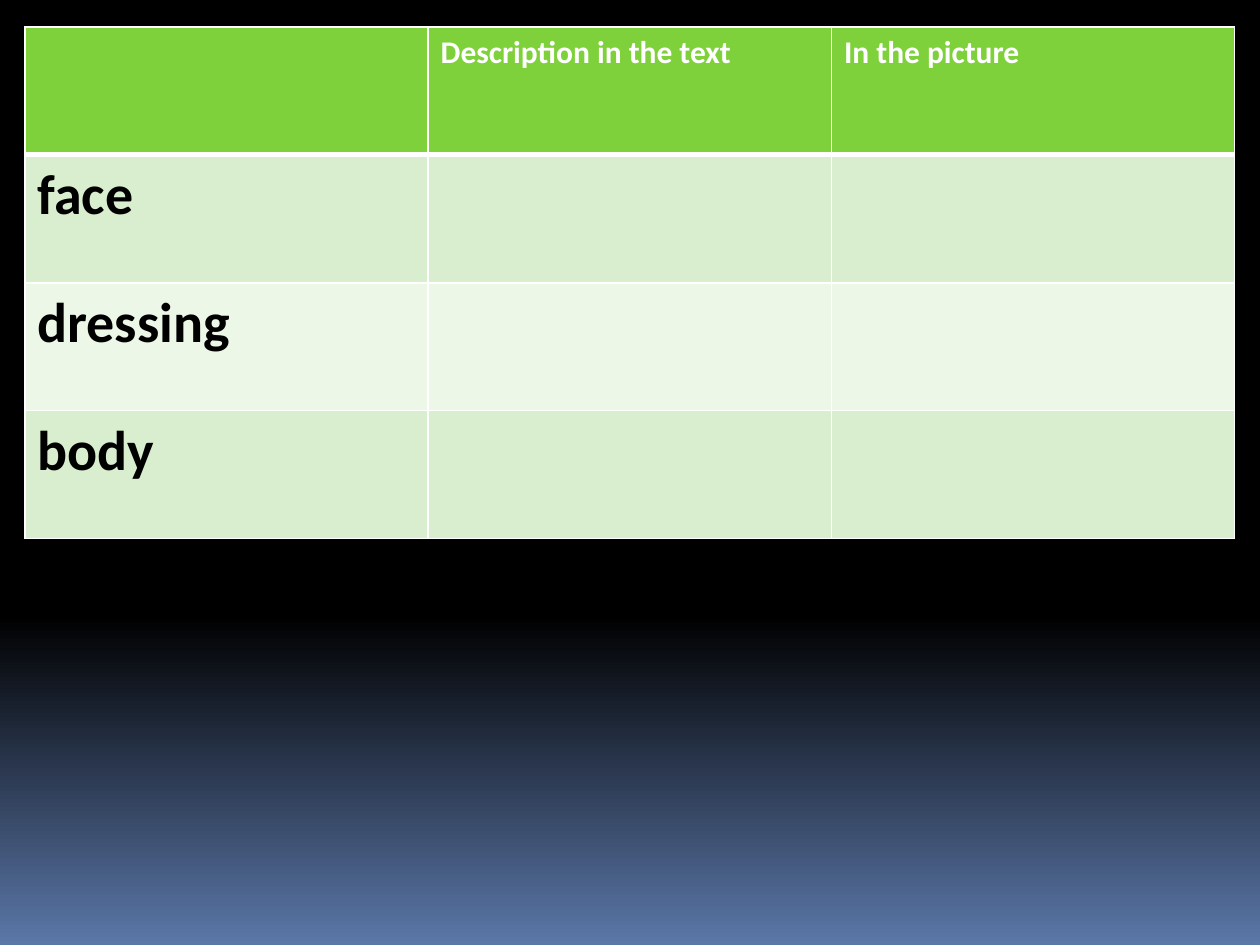
"""Build a slide with a table comparing a described person with a picture."""
from lxml import etree
from pptx import Presentation
from pptx import util as u
from pptx.dml.color import RGBColor
from pptx.oxml.ns import qn

BLACK = RGBColor(0x00, 0x00, 0x00)
WHITE = RGBColor(0xFF, 0xFF, 0xFF)
BLUE = RGBColor(0x5B, 0x77, 0xA8)
GREEN = RGBColor(0x7F, 0xD1, 0x3B)
BANDS = (RGBColor(0xD8, 0xEE, 0xCE), RGBColor(0xEC, 0xF7, 0xE8))

ROWS = (
    ("", "Description in the text", "In the picture"),
    ("face", "", ""),
    ("dressing", "", ""),
    ("body", "", ""),
)
COLUMN_WIDTH = u.Cm(8.13)
ROW_HEIGHT = u.Cm(2.58)


def set_background(slide):
    fill = slide.background.fill
    fill.gradient()
    fill.gradient_angle = 270
    for stop, position, color in zip(fill.gradient_stops, (0.65, 1), (BLACK, BLUE)):
        stop.position = position
        stop.color.rgb = color


def write_text(cell, content, *, size, color, bold=True, font="Calibri"):
    run = cell.text_frame.paragraphs[0].add_run()
    run.text = content
    run.font.name = font
    run.font.size = u.Pt(size)
    run.font.bold = bold
    run.font.color.rgb = color


def set_borders(cell, **widths):
    properties = cell._tc.get_or_add_tcPr()
    for side, width in widths.items():
        line = etree.SubElement(properties, qn(f"a:ln{side}"), w=str(u.Pt(width)))
        solid = etree.SubElement(line, qn("a:solidFill"))
        etree.SubElement(solid, qn("a:srgbClr"), val=str(WHITE))


def add_comparison_table(slide, rows, left, top):
    columns = len(rows[0])
    table = slide.shapes.add_table(
        len(rows), columns, left, top, COLUMN_WIDTH * columns, ROW_HEIGHT * len(rows)
    ).table
    for column in table.columns:
        column.width = COLUMN_WIDTH
    for index, (row, contents) in enumerate(zip(table.rows, rows)):
        row.height = ROW_HEIGHT
        header = index == 0
        for cell, content in zip(row.cells, contents):
            set_borders(cell, L=1, R=1, T=3 if index == 1 else 1, B=3 if header else 1)
            cell.fill.solid()
            cell.fill.fore_color.rgb = GREEN if header else BANDS[(index - 1) % 2]
            if content:
                write_text(cell, content, size=18 if header else 32,
                           color=WHITE if header else BLACK)


def main():
    presentation = Presentation()
    presentation.slide_width = u.Cm(25.4)
    presentation.slide_height = u.Cm(19.05)
    slide = presentation.slides.add_slide(presentation.slide_layouts[6])
    set_background(slide)
    add_comparison_table(slide, ROWS, left=u.Cm(0.5), top=u.Cm(0.54))
    presentation.save("out.pptx")


if __name__ == "__main__":
    main()
